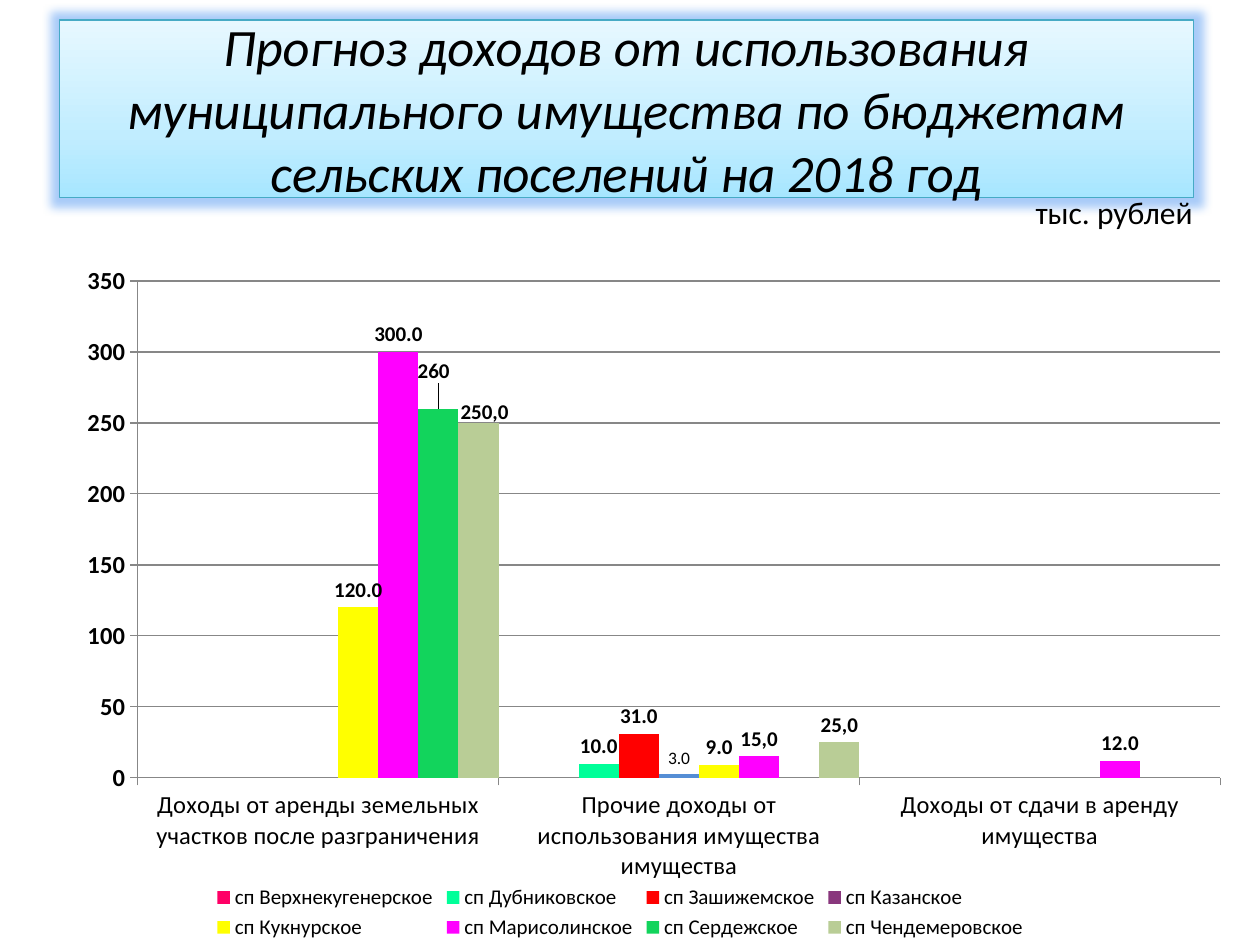
from lxml import etree
from pptx import Presentation
from pptx.chart.data import CategoryChartData
from pptx.dml.color import RGBColor
from pptx.enum.chart import XL_CHART_TYPE, XL_LABEL_POSITION, XL_LEGEND_POSITION, XL_TICK_MARK
from pptx.enum.shapes import MSO_SHAPE
from pptx.enum.text import MSO_ANCHOR, PP_ALIGN
from pptx.oxml import parse_xml
from pptx.oxml.ns import nsdecls, qn
from pptx.util import Inches, Pt

CLUSTERED = XL_CHART_TYPE.COLUMN_CLUSTERED
OUTSIDE_END = XL_LABEL_POSITION.OUTSIDE_END
BOTTOM = XL_LEGEND_POSITION.BOTTOM
TICK_OUTSIDE = XL_TICK_MARK.OUTSIDE
FONT = "Calibri"
COLORS = {
    "text": "000000", "title line": "46AAC5", "glow": "3F8CF0", "axis": "878787",
    "light": "E7F8FF", "middle": "C1EDFF", "deep": "A7E6FF", "point": "558ED5",
}
CATEGORIES = [
    "Доходы от аренды земельных участков после разграничения",
    "Прочие доходы от использования имущества имущества",
    "Доходы от сдачи в аренду имущества",
]
SERIES = [
    ("Series 1", (None, None, None), "66FFFF"),
    ("сп Верхнекугенерское", (None, None, None), "FF0066"),
    ("сп Дубниковское", (None, 10, None), "00FF99"),
    ("сп Зашижемское", (None, 31, None), "FF0000"),
    ("сп Казанское", (None, 3, None), "89377D"),
    ("сп Кукнурское", (120, 9, None), "FFFF00"),
    ("сп Марисолинское", (300, 15, 12), "FF00FF"),
    ("сп Сердежское", (260, None, None), "12D45C"),
    ("сп Чендемеровское", (250, 25, None), "B9CD96"),
]
# (series, category, written label)
WRITTEN_LABELS = [(6, 1, "15,0"), (8, 0, "250,0"), (8, 1, "25,0")]
# (series, category, x shift, y shift) as shares of the chart
MOVED_LABELS = [(7, 0, -0.004, -0.03), (8, 0, 0.005, 0.01)]


def style(font, size, bold=False):
    font.name = FONT
    font.size = Pt(size)
    font.bold = bold
    font.color.rgb = RGBColor.from_string(COLORS["text"])


def manual_layout(**settings):
    """Return a c:layout element with the given settings, in schema order."""
    layout = parse_xml(f"<c:layout {nsdecls('c')}><c:manualLayout/></c:layout>")
    for name, value in settings.items():
        etree.SubElement(layout[0], qn(f"c:{name}")).set("val", str(value))
    return layout


deck = Presentation()
deck.slide_width, deck.slide_height = Inches(10), Inches(7.5)
page = deck.slides.add_slide(deck.slide_layouts[6])

# Title panel
title = page.shapes.add_shape(
    MSO_SHAPE.ROUNDED_RECTANGLE, Inches(0.47), Inches(0.16), Inches(9), Inches(1.41))
title.adjustments[0] = 0
title.shadow.inherit = False
title.line.color.rgb = RGBColor.from_string(COLORS["title line"])
title.line.width = Pt(0.75)
title.fill.gradient()
title.fill.gradient_angle = 90
stops = title._element.spPr.find(qn("a:gradFill")).find(qn("a:gsLst"))
for stop in list(stops):
    stops.remove(stop)
for percent, name in ((0, "deep"), (35, "middle"), (100, "light")):
    stop = etree.SubElement(stops, qn("a:gs"), pos=str(percent * 1000))
    etree.SubElement(stop, qn("a:srgbClr"), val=COLORS[name])
effects = title._element.spPr.find(qn("a:effectLst"))
glow = etree.SubElement(effects, qn("a:glow"), rad=str(Pt(11)))
glow_color = etree.SubElement(glow, qn("a:srgbClr"), val=COLORS["glow"])
etree.SubElement(glow_color, qn("a:alpha"), val="45000")
title.text_frame.word_wrap = True
title.text_frame.vertical_anchor = MSO_ANCHOR.MIDDLE
para = title.text_frame.paragraphs[0]
para.alignment = PP_ALIGN.CENTER
span = para.add_run()
span.text = ("Прогноз доходов от использования муниципального имущества "
             "по бюджетам сельских поселений на 2018 год")
style(span.font, 30)
span.font.italic = True

# Income chart
data = CategoryChartData()
data.categories = CATEGORIES
for name, values, color in SERIES:
    data.add_series(name, values)
chart = page.shapes.add_chart(
    CLUSTERED, Inches(0.16), Inches(2.11), Inches(9.53), Inches(5.39), data).chart
chart.has_title = False
style(chart.font, 18)
plot = chart.plots[0]
plot.gap_width = 0
plot.overlap = 0
plot.vary_by_categories = False
plot_area = chart._chartSpace.chart.plotArea
for old_layout in plot_area.findall(qn("c:layout")):
    plot_area.remove(old_layout)
plot_area.insert(0, manual_layout(
    layoutTarget="inner", xMode="edge", yMode="edge", x=0.098, y=0.022, w=0.902, h=0.732))

for axis, bold in ((chart.category_axis, False), (chart.value_axis, True)):
    style(axis.tick_labels.font, 14, bold)
    axis.major_tick_mark = TICK_OUTSIDE
    axis.format.line.color.rgb = RGBColor.from_string(COLORS["axis"])
value_axis = chart.value_axis
value_axis.minimum_scale, value_axis.maximum_scale, value_axis.major_unit = 0, 350, 50
value_axis.has_major_gridlines = True
value_axis.major_gridlines.format.line.color.rgb = RGBColor.from_string(COLORS["axis"])

for series, (name, values, color) in zip(plot.series, SERIES):
    series.format.fill.solid()
    series.format.fill.fore_color.rgb = RGBColor.from_string(color)
    series.invert_if_negative = False
    labels = series.data_labels
    labels.show_value = True
    labels.position = OUTSIDE_END
    labels.number_format = "General" if name == "сп Сердежское" else "0.0"
    labels.number_format_is_linked = False
    plain = name == "сп Казанское"
    style(labels.font, 10 if plain else 12, not plain)

for category in (0, 1):
    fill = plot.series[4].points[category].format.fill
    fill.solid()
    fill.fore_color.rgb = RGBColor.from_string(COLORS["point"])

for index, category, text in WRITTEN_LABELS:
    label = plot.series[index].points[category].data_label
    span = label.text_frame.paragraphs[0].add_run()
    span.text = text
    style(span.font, 12, True)
    label.position = OUTSIDE_END

for index, category, x, y in MOVED_LABELS:
    series = plot.series[index]
    label = series.points[category].data_label
    if not label.has_text_frame:
        style(label.font, 12, True)
    label.position = OUTSIDE_END
    element = series._element.xpath(f"c:dLbls/c:dLbl[c:idx/@val='{category}']")[0]
    element.insert(1, manual_layout(x=x, y=y))

chart.has_legend = True
legend = chart.legend
legend.position = BOTTOM
legend.include_in_layout = False
style(legend.font, 12)
legend._element.find(qn("c:legendPos")).addnext(parse_xml(
    f'<c:legendEntry {nsdecls("c")}><c:idx val="0"/><c:delete val="1"/></c:legendEntry>'))

# Unit note
box = page.shapes.add_textbox(Inches(8.12), Inches(1.48), Inches(1.88), Inches(0.4))
box.text_frame.word_wrap = True
span = box.text_frame.paragraphs[0].add_run()
span.text = "тыс. рублей"
style(span.font, 18)

deck.save("out.pptx")
